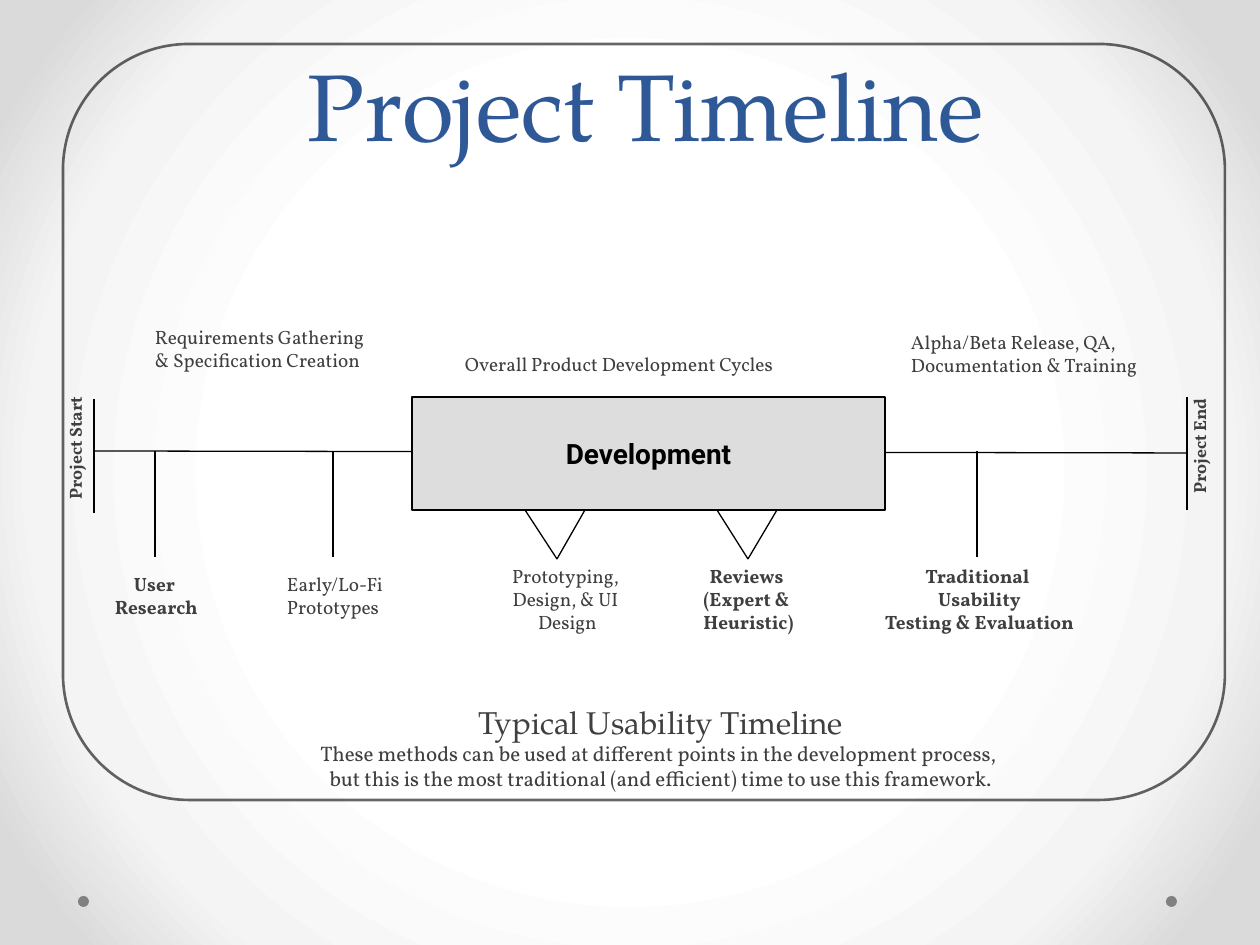
from lxml import etree
from pptx import Presentation
from pptx.dml.color import RGBColor
from pptx.enum.shapes import MSO_CONNECTOR, MSO_SHAPE
from pptx.enum.text import MSO_ANCHOR, PP_ALIGN
from pptx.oxml import parse_xml
from pptx.oxml.ns import nsdecls, qn
from pptx.util import Pt

LINE = MSO_CONNECTOR.STRAIGHT
RECT = MSO_SHAPE.RECTANGLE
OVAL = MSO_SHAPE.OVAL
FRAME = MSO_SHAPE.FLOWCHART_ALTERNATE_PROCESS
LEFT, MID = PP_ALIGN.LEFT, PP_ALIGN.CENTER
TOP, CENTER, BOTTOM = MSO_ANCHOR.TOP, MSO_ANCHOR.MIDDLE, MSO_ANCHOR.BOTTOM

SERIF, BODY, SANS = "TeX Gyre Pagella", "Vollkorn", "Roboto"
COLORS = {
    "title": "2F5897",
    "text": "3F3F3F",
    "ink": "000000",
    "box": "DDDDDD",
    "dot": "808080",
}
GLOW = [(50, "FFFFFF"), (76, "F4F4F4"), (92, "DADADA")]

LABELS = [
    ((144, 320, 237, 58), ["Requirements Gathering & Specification Creation"], LEFT, False),
    ((454, 347, 426, 35), ["Overall Product Development Cycles"], LEFT, False),
    ((900, 325, 262, 58), ["Alpha/Beta Release, QA, ", "Documentation & Training"], LEFT, False),
    ((81, 567, 151, 82), ["User ", "Research"], MID, True),
    ((276, 567, 151, 58), ["Early/Lo-Fi", "Prototypes"], LEFT, False),
    ((449, 559, 237, 82), ["Prototyping, ", "Design, & UI ", "Design"], MID, False),
    ((635, 559, 227, 82), ["Reviews ", "(Expert & ", "Heuristic)"], MID, True),
    ((861, 559, 237, 82), ["Traditional ", "Usability", "Testing & Evaluation"], MID, True),
]
ENDS = [
    ((10, 428, 132, 33), "Project Start"),
    ((1134, 422, 132, 33), "Project End"),
]
AXIS = (94, 451, 1187, 453)
BARS = [(94, 399, 94, 513), (1187, 397, 1187, 510)]
STEMS = [155, 333, 977]
NOTCHES = [(525, 557, 585), (717, 748, 777)]


def px(n):
    return round(n * 914400 / 126)


def rgb(name):
    return RGBColor.from_string(COLORS[name])


def add_back(slide):
    slide.background.fill.solid()
    prop = slide.element.find(".//" + qn("p:bgPr"))
    stops = "".join(
        f'<a:gs pos="{pos * 1000}"><a:srgbClr val="{color}"/></a:gs>'
        for pos, color in GLOW
    )
    glow = parse_xml(
        f'<a:gradFill {nsdecls("a")} rotWithShape="1"><a:gsLst>{stops}</a:gsLst>'
        '<a:path path="circle"><a:fillToRect l="50000" t="50000" r="50000" b="50000"/>'
        "</a:path></a:gradFill>"
    )
    prop.replace(prop[0], glow)


def add_form(slide, kind, box, fill=None, width=None):
    form = slide.shapes.add_shape(kind, *map(px, box))
    form.shadow.inherit = False
    if fill:
        form.fill.solid()
        form.fill.fore_color.rgb = rgb(fill)
    else:
        form.fill.background()
    if width:
        form.line.color.rgb = rgb("ink")
        form.line.width = Pt(width)
    else:
        form.line.fill.background()
    return form


def add_line(slide, x1, y1, x2, y2):
    line = slide.shapes.add_connector(LINE, *map(px, (x1, y1, x2, y2)))
    line.line.color.rgb = rgb("ink")
    line.line.width = Pt(0.75)
    etree.SubElement(line._element.spPr, qn("a:effectLst"))


def write(shape, lines, align=LEFT, anchor=TOP, wrap=True):
    frame = shape.text_frame
    frame.word_wrap = wrap
    frame.vertical_anchor = anchor
    frame.margin_left = frame.margin_right = px(11)
    frame.margin_top = frame.margin_bottom = px(5)
    para = frame.paragraphs[0]
    para.alignment = align
    for i, (text, font, size, color, bold) in enumerate(lines):
        if i:
            para.add_line_break()
            mark = para._p[-1]
            etree.SubElement(mark, qn("a:rPr"), sz=str(lines[i - 1][2] * 100))
        run = para.add_run()
        run.text = text
        run.font.name = font
        run.font.size = Pt(size)
        run.font.bold = bold
        run.font.color.rgb = rgb(color)
    return para


def add_text(slide, box, lines, align=LEFT, anchor=TOP, turn=0):
    shape = slide.shapes.add_textbox(*map(px, box))
    shape.rotation = turn
    return write(shape, lines, align, anchor)


def add_label(slide, box, texts, align, bold, size=11, turn=0):
    lines = [(text, BODY, size, "text", bold) for text in texts]
    add_text(slide, box, lines, align, turn=turn)


def add_heads(slide):
    title = [("Project Timeline", SERIF, 54, "title", False)]
    para = add_text(slide, (79, 52, 1134, 113), title, MID, BOTTOM)
    para.line_spacing = Pt(58)
    notes = [
        ("Typical Usability Timeline", SERIF, 18, "text", False),
        ("These methods can be used at different points in the development process, ",
         BODY, 12, "text", False),
        ("but this is the most traditional (and efficient) time to use this framework.",
         BODY, 12, "text", False),
    ]
    para = add_text(slide, (165, 698, 992, 101), notes, MID)
    para.space_before = Pt(5.4)


def add_track(slide):
    add_line(slide, *AXIS)
    box = add_form(slide, RECT, (412, 397, 473, 113), "box", 0.75)
    write(box, [("Development", SANS, 16, "ink", True)], MID, CENTER, False)
    for bar in BARS:
        add_line(slide, *bar)
    for x in STEMS:
        add_line(slide, x, 451, x, 557)
    for left, tip, right in NOTCHES:
        add_line(slide, left, 510, tip, 559)
        add_line(slide, tip, 559, right, 510)


def main():
    deck = Presentation()
    deck.slide_width, deck.slide_height = px(1260), px(945)
    slide = deck.slides.add_slide(deck.slide_layouts[6])
    add_back(slide)
    for x in (1166, 78):
        add_form(slide, OVAL, (x, 896, 11, 11), "dot")
    frame = add_form(slide, FRAME, (63, 44, 1162, 756), width=1.5)
    tint = frame.line.color._xFill.find(qn("a:srgbClr"))
    etree.SubElement(tint, qn("a:alpha"), val="60000")
    add_heads(slide)
    add_track(slide)
    for label in LABELS:
        add_label(slide, *label)
    for box, text in ENDS:
        add_label(slide, box, [text], LEFT, True, 10, 270)
    deck.save("out.pptx")


if __name__ == "__main__":
    main()
